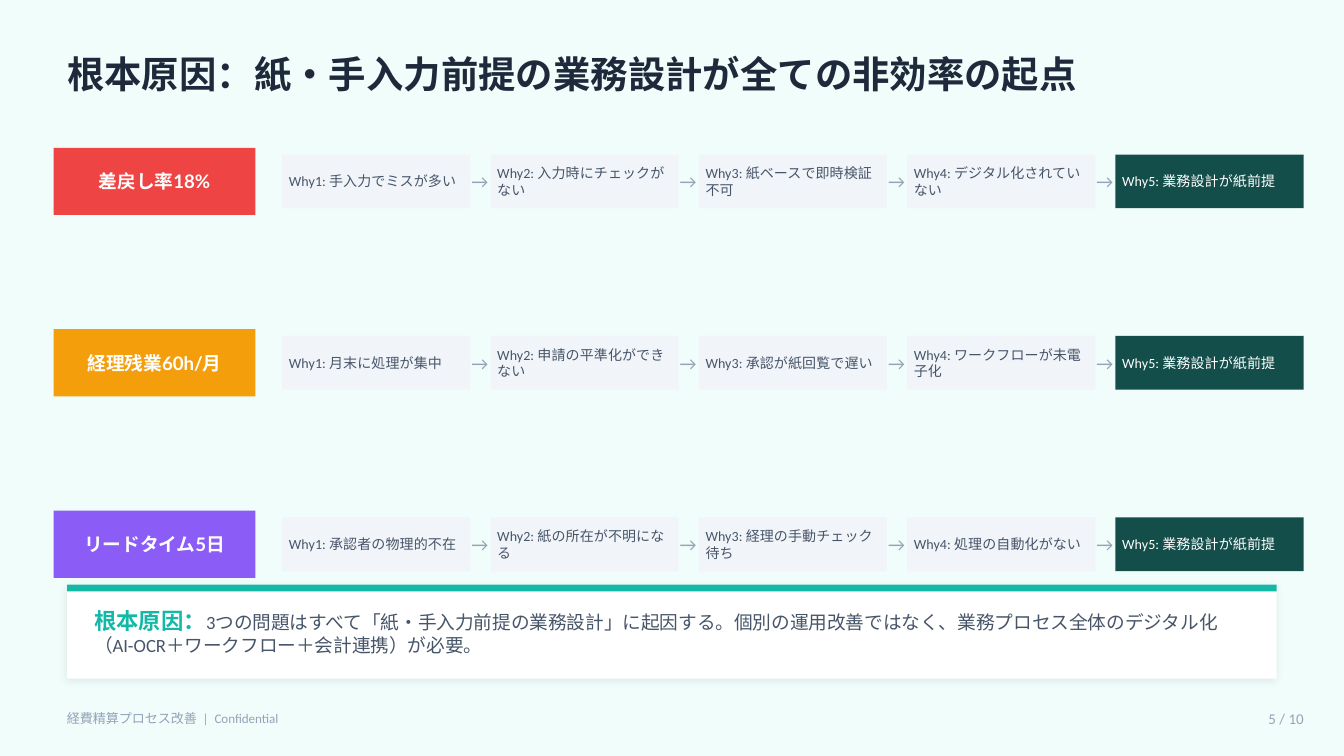
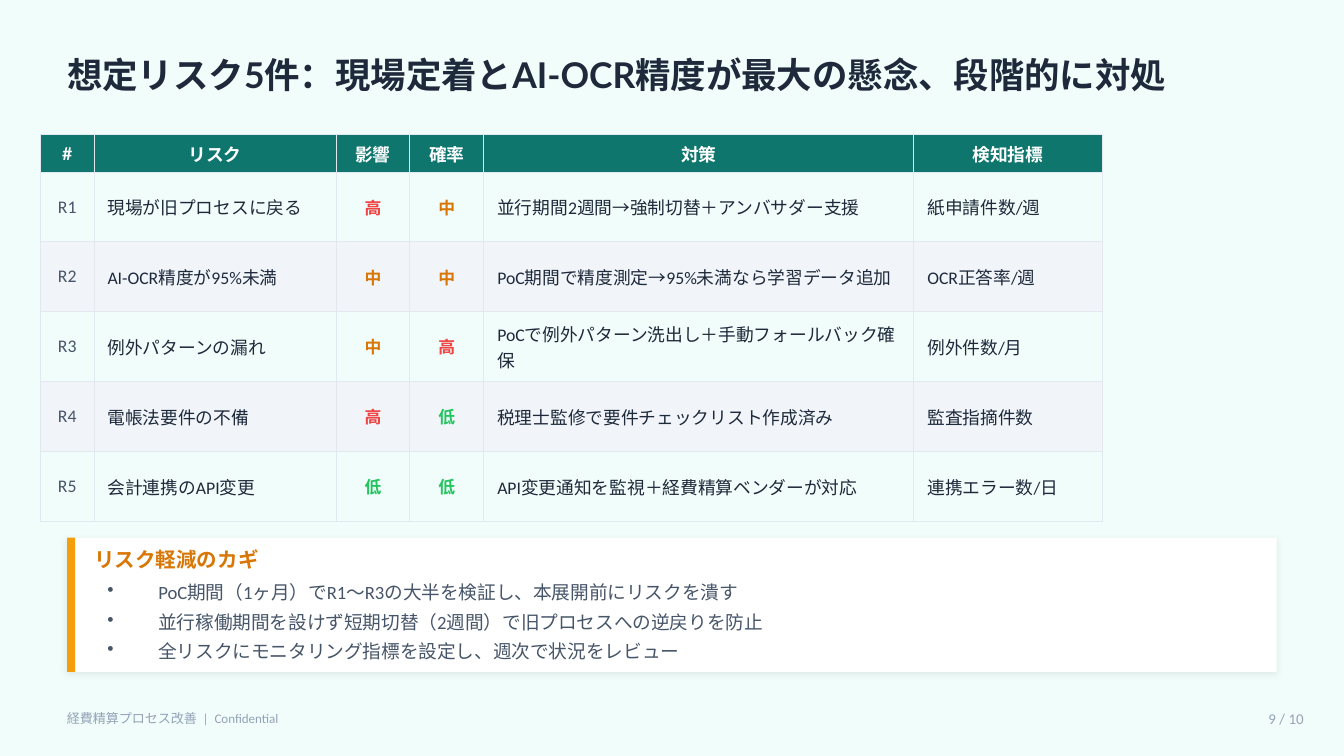
from lxml import etree
from pptx import Presentation
from pptx.dml.color import RGBColor
from pptx.enum import shapes, text
from pptx.oxml import ns
from pptx.util import Inches, Pt

MINT = RGBColor(0xF0, 0xFD, 0xFA)
WHITE = RGBColor(0xFF, 0xFF, 0xFF)
INK = RGBColor(0x1E, 0x29, 0x3B)
SLATE = RGBColor(0x47, 0x55, 0x69)
MUTED = RGBColor(0x94, 0xA3, 0xB8)
PALE = RGBColor(0xF1, 0xF5, 0xF9)
RULE = RGBColor(0xE2, 0xE8, 0xF0)
TEAL = RGBColor(0x14, 0xB8, 0xA6)
TEAL_MID = RGBColor(0x0F, 0x76, 0x6E)
TEAL_DARK = RGBColor(0x13, 0x4E, 0x4A)
RED = RGBColor(0xEF, 0x44, 0x44)
AMBER = RGBColor(0xF5, 0x9E, 0x0B)
OCHRE = RGBColor(0xD9, 0x77, 0x06)
VIOLET = RGBColor(0x8B, 0x5C, 0xF6)
GREEN = RGBColor(0x22, 0xC5, 0x5E)

HEAD, BODY = "Lato", "Calibri"
LEFT, CENTER, RIGHT = text.PP_ALIGN.LEFT, text.PP_ALIGN.CENTER, text.PP_ALIGN.RIGHT
MIDDLE = text.MSO_ANCHOR.MIDDLE
PAGE_COUNT = 10

WHY_CHAINS = [
    ("差戻し率18%", RED,
     ["手入力でミスが多い", "入力時にチェックがない", "紙ベースで即時検証不可",
      "デジタル化されていない", "業務設計が紙前提"]),
    ("経理残業60h/月", AMBER,
     ["月末に処理が集中", "申請の平準化ができない", "承認が紙回覧で遅い",
      "ワークフローが未電子化", "業務設計が紙前提"]),
    ("リードタイム5日", VIOLET,
     ["承認者の物理的不在", "紙の所在が不明になる", "経理の手動チェック待ち",
      "処理の自動化がない", "業務設計が紙前提"]),
]

RISK_HEADINGS = ["#", "リスク", "影響", "確率", "対策", "検知指標"]
RISK_WIDTHS = [0.4, 1.8, 0.55, 0.55, 3.2, 1.4]
RISKS = [
    ("現場が旧プロセスに戻る", "高", "中", "並行期間2週間→強制切替＋アンバサダー支援", "紙申請件数/週"),
    ("AI-OCR精度が95%未満", "中", "中", "PoC期間で精度測定→95%未満なら学習データ追加", "OCR正答率/週"),
    ("例外パターンの漏れ", "中", "高", "PoCで例外パターン洗出し＋手動フォールバック確保", "例外件数/月"),
    ("電帳法要件の不備", "高", "低", "税理士監修で要件チェックリスト作成済み", "監査指摘件数"),
    ("会計連携のAPI変更", "低", "低", "API変更通知を監視＋経費精算ベンダーが対応", "連携エラー数/日"),
]
LEVEL_COLORS = {"高": RED, "中": OCHRE, "低": GREEN}

MITIGATION_KEYS = [
    "PoC期間（1ヶ月）でR1〜R3の大半を検証し、本展開前にリスクを潰す",
    "並行稼働期間を設けず短期切替（2週間）で旧プロセスへの逆戻りを防止",
    "全リスクにモニタリング指標を設定し、週次で状況をレビュー",
]


def add_run(paragraph, words, size, color, font=BODY, bold=False):
    run = paragraph.add_run()
    run.text = words
    run.font.size = Pt(size)
    run.font.name = font
    run.font.bold = bold
    run.font.color.rgb = color


def prepare_frame(shape, side=0, edge=0):
    """Set wrapping, middle anchor and insets; return the text frame."""
    frame = shape.text_frame
    frame.word_wrap = True
    frame.vertical_anchor = MIDDLE
    frame.margin_left = frame.margin_right = Inches(side)
    frame.margin_top = frame.margin_bottom = Inches(edge)
    return frame


def add_textbox(slide, box, side=0, edge=0):
    return prepare_frame(slide.shapes.add_textbox(*map(Inches, box)), side, edge)


def add_line(slide, box, words, size, color, font=BODY, bold=False, align=LEFT, **insets):
    paragraph = add_textbox(slide, box, **insets).paragraphs[0]
    paragraph.alignment = align
    add_run(paragraph, words, size, color, font, bold)


def add_block(slide, box, color):
    block = slide.shapes.add_shape(shapes.MSO_SHAPE.RECTANGLE, *map(Inches, box))
    block.shadow.inherit = False
    block.fill.solid()
    block.fill.fore_color.rgb = color
    block.line.fill.background()
    return block


def add_labelled_block(slide, box, fill, words, size, color, font=BODY, bold=False,
                       align=LEFT, side=0):
    paragraph = prepare_frame(add_block(slide, box, fill), side).paragraphs[0]
    paragraph.alignment = align
    add_run(paragraph, words, size, color, font, bold)


def add_card(slide, box, accent_box, accent):
    """White panel with a soft shadow and a coloured strip along one edge."""
    card = add_block(slide, box, WHITE)
    effects = card._element.spPr.find(ns.qn("a:effectLst"))
    shadow = etree.SubElement(effects, ns.qn("a:outerShdw"), blurRad=str(Pt(4)),
                              dist=str(Pt(1)), dir=str(135 * 60000),
                              algn="bl", rotWithShape="0")
    black = etree.SubElement(shadow, ns.qn("a:srgbClr"), val="000000")
    etree.SubElement(black, ns.qn("a:alpha"), val="8000")
    add_block(slide, accent_box, accent)


def add_slide(deck, title, title_size):
    slide = deck.slides.add_slide(deck.slide_layouts[6])
    slide.background.fill.solid()
    slide.background.fill.fore_color.rgb = MINT
    add_line(slide, (0.5, 0.3, 9, 0.5), title, title_size, INK, HEAD, True)
    return slide


def add_footer(slide, page):
    add_line(slide, (9.1, 5.22, 0.7, 0.25), f"{page} / {PAGE_COUNT}", 8, MUTED,
             align=RIGHT, side=0.1, edge=0.05)
    add_line(slide, (0.4, 5.22, 4.5, 0.25), "経費精算プロセス改善  |  Confidential", 7, MUTED,
             side=0.1, edge=0.05)


def add_why_chain(slide, top, problem, color, reasons):
    add_labelled_block(slide, (0.4, top, 1.5, 0.5), color, problem, 10, WHITE,
                       HEAD, True, CENTER)
    for i, reason in enumerate(reasons):
        left = 2.1 + 1.55 * i
        is_root = i == len(reasons) - 1
        add_labelled_block(slide, (left, top + 0.05, 1.4, 0.4),
                           TEAL_DARK if is_root else PALE, f"Why{i + 1}: {reason}",
                           7.5, WHITE if is_root else SLATE, side=0.05)
        if not is_root:
            add_line(slide, (left + 1.38, top + 0.1, 0.18, 0.3), "→", 10, MUTED, align=CENTER)


def add_cell_borders(cell):
    properties = cell._tc.get_or_add_tcPr()
    for edge in ("lnL", "lnR", "lnT", "lnB"):
        border = etree.SubElement(properties, ns.qn(f"a:{edge}"), w=str(Pt(0.5)))
        fill = etree.SubElement(border, ns.qn("a:solidFill"))
        etree.SubElement(fill, ns.qn("a:srgbClr"), val=str(RULE))


def fill_cell(cell, fill, words, size, color, font=BODY, bold=False, align=LEFT):
    """Style and fill one table cell; a fill of None leaves it clear."""
    add_cell_borders(cell)
    if fill is None:
        cell.fill.background()
    else:
        cell.fill.solid()
        cell.fill.fore_color.rgb = fill
    cell.vertical_anchor = MIDDLE
    paragraph = cell.text_frame.paragraphs[0]
    paragraph.alignment = align
    add_run(paragraph, words, size, color, font, bold)


def add_risk_table(slide):
    heights = [0.28] + [0.52] * len(RISKS)
    table = slide.shapes.add_table(
        len(heights), len(RISK_WIDTHS), Inches(0.3), Inches(1),
        Inches(sum(RISK_WIDTHS)), Inches(sum(heights))).table
    table.first_row = table.horz_banding = False
    for column, width in zip(table.columns, RISK_WIDTHS):
        column.width = Inches(width)
    for row, height in zip(table.rows, heights):
        row.height = Inches(height)

    for c, heading in enumerate(RISK_HEADINGS):
        fill_cell(table.cell(0, c), TEAL_MID, heading, 9.5, WHITE, HEAD, True, CENTER)
    for r, risk in enumerate(RISKS, 1):
        band = None if r % 2 else PALE
        fill_cell(table.cell(r, 0), band, f"R{r}", 9.5, SLATE, align=CENTER)
        for c, words in enumerate(risk, 1):
            cell = table.cell(r, c)
            if words in LEVEL_COLORS:
                fill_cell(cell, band, words, 9, LEVEL_COLORS[words], HEAD, True, CENTER)
            else:
                fill_cell(cell, band, words, 9.5, INK)


def add_bullets(slide, box, items):
    frame = add_textbox(slide, box, side=0.1, edge=0.05)
    for i, item in enumerate(items):
        paragraph = frame.add_paragraph() if i else frame.paragraphs[0]
        properties = paragraph._p.get_or_add_pPr()
        properties.set("marL", str(Inches(0.38)))
        properties.set("indent", str(-Inches(0.38)))
        etree.SubElement(properties, ns.qn("a:buChar"), char="•")
        paragraph.space_after = Pt(4)
        add_run(paragraph, item, 10, SLATE)


def build_root_cause(deck):
    slide = add_slide(deck, "根本原因：紙・手入力前提の業務設計が全ての非効率の起点", 20)
    for i, chain in enumerate(WHY_CHAINS):
        add_why_chain(slide, 1.1 + 1.35 * i, *chain)
    add_card(slide, (0.5, 4.35, 9, 0.7), (0.5, 4.35, 9, 0.05), TEAL)
    conclusion = add_textbox(slide, (0.7, 4.45, 8.6, 0.5)).paragraphs[0]
    add_run(conclusion, "根本原因：", 12, TEAL, HEAD, True)
    add_run(conclusion, "3つの問題はすべて「紙・手入力前提の業務設計」に起因する。"
            "個別の運用改善ではなく、業務プロセス全体のデジタル化"
            "（AI-OCR＋ワークフロー＋会計連携）が必要。", 10, SLATE)
    add_footer(slide, 5)


def build_risks(deck):
    slide = add_slide(deck, "想定リスク5件：現場定着とAI-OCR精度が最大の懸念、段階的に対処", 19)
    add_risk_table(slide)
    add_card(slide, (0.5, 4, 9, 1), (0.5, 4, 0.06, 1), AMBER)
    add_line(slide, (0.7, 4.05, 3, 0.22), "リスク軽減のカギ", 11, OCHRE, HEAD, True)
    add_bullets(slide, (0.7, 4.3, 8.6, 0.65), MITIGATION_KEYS)
    add_footer(slide, 9)


def main():
    deck = Presentation()
    deck.slide_width = Inches(10)
    deck.slide_height = Inches(10) * 9 // 16
    build_root_cause(deck)
    build_risks(deck)
    deck.save("out.pptx")


if __name__ == "__main__":
    main()
